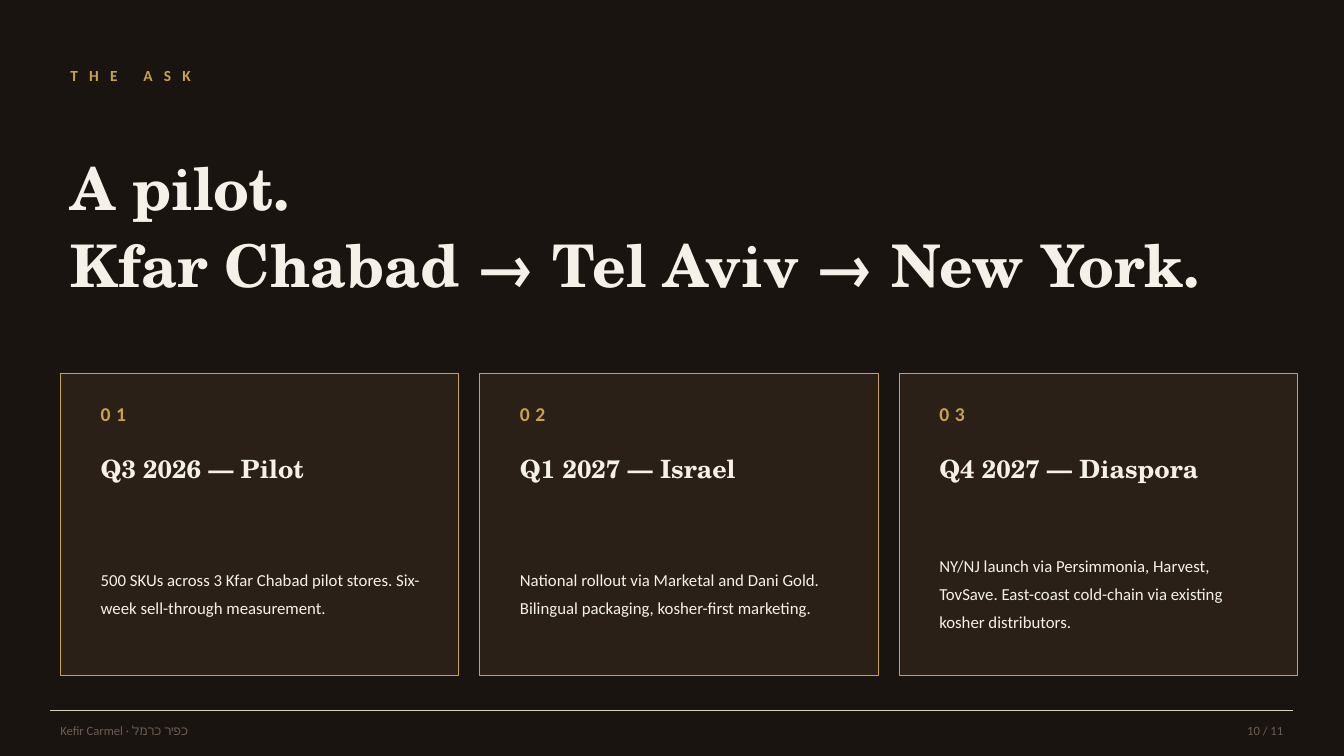
from lxml.etree import SubElement
from pptx import Presentation
from pptx.dml.color import RGBColor
from pptx.enum.shapes import MSO_CONNECTOR as CONN, MSO_SHAPE as SHAPE
from pptx.enum.text import MSO_ANCHOR as ANCHOR, MSO_AUTO_SIZE as AUTO, PP_ALIGN as ALIGN
from pptx.oxml.ns import qn
from pptx.util import Pt

COLORS = {"bg": "1A1410", "card": "2A2018", "gold": "C9A24C",
          "cream": "F6F1E8", "muted": "6B5E55", "rule": "D9CFBF"}
SERIF, SANS = "TeX Gyre Schola", "Calibri"


def rgb(name):
    return RGBColor.from_string(COLORS[name])


class Deck:
    """Holds the style and the current slide."""

    def __init__(self):
        self.prs = Presentation()
        self.prs.slide_width, self.prs.slide_height = Pt(960), Pt(540)

    def add_slide(self):
        self.slide = self.prs.slides.add_slide(self.prs.slide_layouts[5])
        fill = self.slide.background.fill
        fill.solid()
        fill.fore_color.rgb = rgb("bg")

    def set_text(self, sp, lines, size, color, font=SANS, bold=False,
                 spacing=None, tracking=0, align=ALIGN.LEFT):
        tf = sp.text_frame
        tf.word_wrap, tf.auto_size = True, AUTO.NONE
        tf.vertical_anchor = ANCHOR.MIDDLE
        for i, line in enumerate(lines):
            p = tf.paragraphs[0] if i == 0 else tf.add_paragraph()
            r = p.add_run()
            r.text = line
            if tracking:
                r._r.get_or_add_rPr().set("spc", str(tracking * 100))
            p.alignment = align
            if spacing:
                p.line_spacing = spacing
            p.font.name, p.font.size, p.font.bold = font, Pt(size), bold
            p.font.color.rgb = rgb(color)

    def title(self, x, y, w, h, lines, size, **style):
        sp = self.slide.shapes.title
        sp.left, sp.top, sp.width, sp.height = Pt(x), Pt(y), Pt(w), Pt(h)
        self.set_text(sp, lines, size, "cream", SERIF, True, **style)

    def text(self, x, y, w, h, text, size, color, **style):
        sp = self.slide.shapes.add_textbox(Pt(x), Pt(y), Pt(w), Pt(h))
        self.set_text(sp, [text], size, color, **style)

    def panel(self, x, y, w, h):
        sp = self.slide.shapes.add_shape(SHAPE.RECTANGLE, Pt(x), Pt(y), Pt(w), Pt(h))
        sp.shadow.inherit = False
        sp.fill.solid()
        sp.fill.fore_color.rgb = rgb("card")
        sp.line.color.rgb = rgb("gold")
        sp.line.width = Pt(0.5)

    def rule(self, x1, x2, y):
        cn = self.slide.shapes.add_connector(CONN.STRAIGHT, Pt(x1), Pt(y), Pt(x2), Pt(y))
        cn.line.color.rgb = rgb("rule")
        cn.line.width = Pt(0.5)
        SubElement(cn._element.spPr, qn("a:effectLst"))

    def card(self, x, y, number, heading, body):
        self.panel(x, y, 284.4, 216)
        left = x + 21.6
        self.text(left, y + 10.8, 108, 36, f"{number:02}", 14, "gold", bold=True, tracking=4)
        self.text(left, y + 46.8, 244.8, 43.2, heading, 18, "cream", font=SERIF, bold=True)
        self.text(left, y + 97.2, 244.8, 115.2, body, 12, "cream", spacing=1.4)


PHASES = [
    ("Q3 2026 — Pilot",
     "500 SKUs across 3 Kfar Chabad pilot stores. Six-week sell-through measurement."),
    ("Q1 2027 — Israel",
     "National rollout via Marketal and Dani Gold. Bilingual packaging, kosher-first marketing."),
    ("Q4 2027 — Diaspora",
     "NY/NJ launch via Persimmonia, Harvest, TovSave. East-coast cold-chain via existing "
     "kosher distributors."),
]


def main():
    deck = Deck()
    deck.add_slide()

    # Kicker and title
    deck.text(43.2, 43.2, 432, 21.6, "THE ASK", 11, "gold", bold=True, tracking=8)
    deck.title(43.2, 79.2, 864, 158.4,
               ["A pilot.", "Kfar Chabad → Tel Aviv → New York."], 42, spacing=1.1)

    # Phase cards
    for i, (heading, body) in enumerate(PHASES):
        deck.card(43.2 + i * 299.52, 266.4, i + 1, heading, body)

    # Footer
    deck.text(36, 511.2, 432, 21.6, "Kefir Carmel · כפיר כרמל", 9, "muted")
    deck.text(873.36, 511.2, 50.4, 21.6, "10 / 11", 9, "muted", align=ALIGN.RIGHT)
    deck.rule(36, 923.76, 507.6)

    deck.prs.save("out.pptx")


if __name__ == "__main__":
    main()
